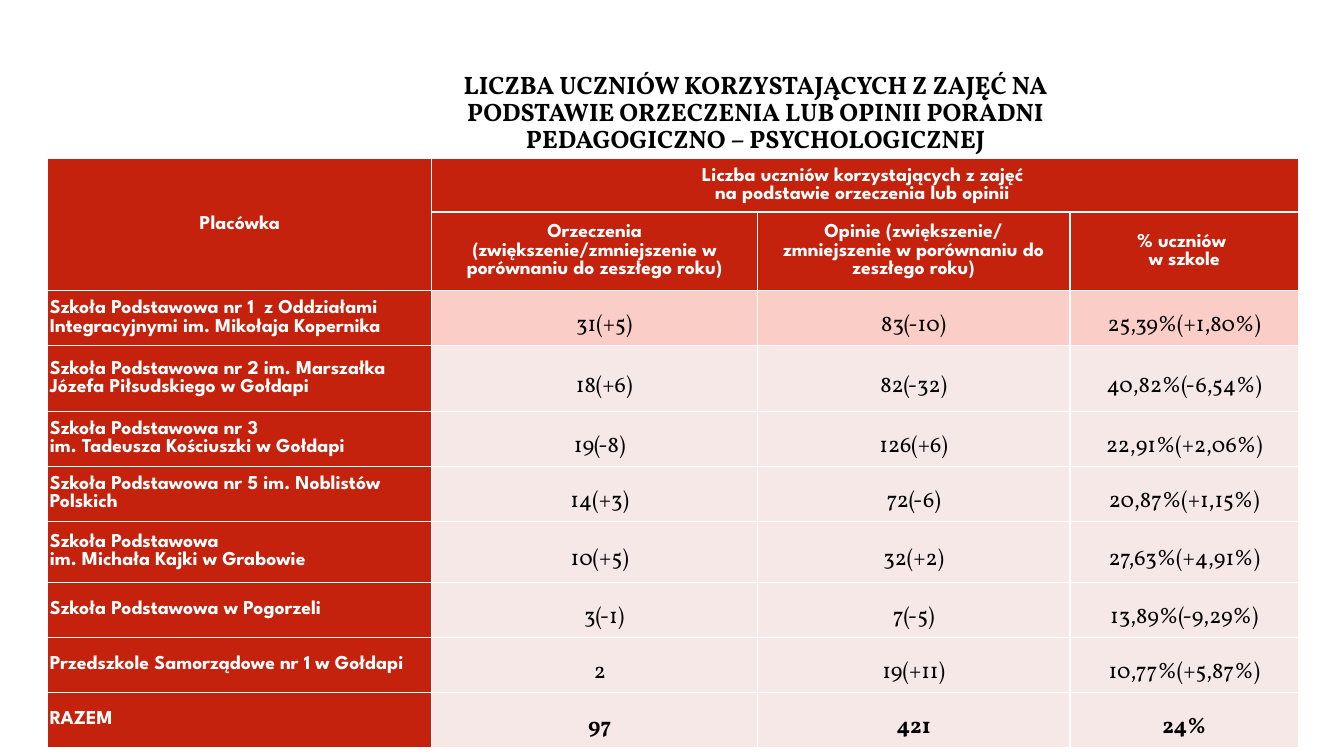
from dataclasses import dataclass
from typing import Any

from lxml.etree import SubElement
from pptx import Presentation
from pptx.dml.color import RGBColor
from pptx.enum.text import MSO_ANCHOR, PP_ALIGN
from pptx.oxml.ns import qn
from pptx.util import Pt


@dataclass(frozen=True)
class Theme:
    red: RGBColor = RGBColor(0xC4, 0x22, 0x0D)
    rose: RGBColor = RGBColor(0xFB, 0xCD, 0xC7)
    blush: RGBColor = RGBColor(0xF5, 0xE8, 0xE7)
    white: RGBColor = RGBColor(0xFF, 0xFF, 0xFF)
    black: RGBColor = RGBColor(0x00, 0x00, 0x00)
    label_font: str = "League Spartan"
    value_font: str = "Vollkorn"
    title_size: int = 18
    label_size: int = 14
    value_size: int = 16


@dataclass(frozen=True)
class TextStyle:
    font: dict[str, Any]
    color: RGBColor
    paragraph: dict[str, Any]
    indent: float = 0


@dataclass(frozen=True)
class CellStyle:
    text: TextStyle
    fill: RGBColor
    inset: float


@dataclass(frozen=True)
class HeaderCell:
    row: int
    column: int
    text: str
    paragraph: dict[str, Any]
    last_row: int
    last_column: int


@dataclass(frozen=True)
class School:
    name: str
    values: tuple[str, str, str]
    height: float
    indent: float = 7.2
    fill: RGBColor = Theme.blush
    line_spacing: float = 1.5
    before: float = 2.9
    after: float = 2.9
    bold: bool = False
    name_alignment: PP_ALIGN = PP_ALIGN.LEFT


THEME = Theme()
TITLE = "LICZBA UCZNIÓW KORZYSTAJĄCYCH Z ZAJĘĆ NA PODSTAWIE ORZECZENIA LUB OPINII PORADNI PEDAGOGICZNO – PSYCHOLOGICZNEJ"
COLUMN_WIDTHS = (274.3, 232.6, 223.2, 163.4)
HEADER_HEIGHTS = (38.2, 56.2)
LABEL_INSET = 1.44
VALUE_INSET = 2.88
LABEL_FONT = {"name": THEME.label_font, "size": Pt(THEME.label_size), "bold": True}
LABEL_SPACING = {"space_before": Pt(2.9), "space_after": Pt(2.9)}
CENTERED = {"alignment": PP_ALIGN.CENTER}
CENTERED_SPACED = CENTERED | LABEL_SPACING

HEADERS = (
    HeaderCell(0, 0, "Placówka", CENTERED_SPACED, 1, 0),
    HeaderCell(0, 1, "Liczba uczniów korzystających z zajęć \vna podstawie orzeczenia lub opinii ",
               CENTERED_SPACED, 0, 3),
    HeaderCell(1, 1, "Orzeczenia (zwiększenie/zmniejszenie w porównaniu do zeszłego roku)",
               CENTERED, 1, 1),
    HeaderCell(1, 2, "Opinie (zwiększenie/\nzmniejszenie w porównaniu do zeszłego roku)",
               CENTERED, 1, 2),
    HeaderCell(1, 3, "% uczniów \vw szkole", CENTERED, 1, 3),
)

SCHOOLS = (
    School("Szkoła Podstawowa nr 1  z Oddziałami Integracyjnymi im. Mikołaja Kopernika",
           ("31(+5)", "83(-10)", "25,39%(+1,80%)"), 38.2, indent=13.7, fill=THEME.rose),
    School("Szkoła Podstawowa nr 2 im. Marszałka Józefa Piłsudskiego w Gołdapi",
           ("18(+6)", "82(-32)", "40,82%(-6,54%)"), 46.8, indent=13.7,
           line_spacing=1.54, before=0, after=0.2),
    School("Szkoła Podstawowa nr 3 \vim. Tadeusza Kościuszki w Gołdapi",
           ("19(-8)", "126(+6)", "22,91%(+2,06%)"), 38.2),
    School("Szkoła Podstawowa nr 5 im. Noblistów Polskich",
           ("14(+3)", "72(-6)", "20,87%(+1,15%)"), 38.2),
    School("Szkoła Podstawowa \vim. Michała Kajki w Grabowie",
           ("10(+5)", "32(+2)", "27,63%(+4,91%)"), 43.9),
    School("Szkoła Podstawowa w Pogorzeli",
           ("3(-1)", "7(-5)", "13,89%(-9,29%)"), 38.2, indent=13.7),
    School("Przedszkole Samorządowe nr 1 w Gołdapi",
           ("2", "19(+11)", "10,77%(+5,87%)"), 35.3),
    School("RAZEM", ("97", "421", "24%"), 19.4, bold=True, name_alignment=PP_ALIGN.JUSTIFY),
)


def apply(target: Any, values: dict[str, Any]) -> None:
    for name, value in values.items():
        setattr(target, name, value)


def write_text(text_frame: Any, text: str, style: TextStyle) -> None:
    text_frame.text = text
    for paragraph in text_frame.paragraphs:
        apply(paragraph, style.paragraph)
        if style.indent:
            properties = paragraph._p.get_or_add_pPr()
            properties.set("marL", str(Pt(style.indent)))
            properties.set("indent", "0")
        for run in paragraph.runs:
            apply(run.font, style.font)
            run.font.color.rgb = style.color


def draw_borders(cell: Any) -> None:
    properties = cell._tc.get_or_add_tcPr()
    for side in ("a:lnL", "a:lnR", "a:lnT", "a:lnB"):
        line = SubElement(properties, qn(side), w=str(Pt(1)))
        SubElement(SubElement(line, qn("a:solidFill")), qn("a:srgbClr"), val=str(THEME.white))


def fill_cell(cell: Any, text: str, style: CellStyle) -> None:
    sides = ("margin_left", "margin_right", "margin_top", "margin_bottom")
    apply(cell, dict.fromkeys(sides, Pt(style.inset)))
    cell.vertical_anchor = MSO_ANCHOR.MIDDLE
    cell.fill.solid()
    cell.fill.fore_color.rgb = style.fill
    write_text(cell.text_frame, text, style.text)


def label_style(paragraph: dict[str, Any]) -> CellStyle:
    return CellStyle(TextStyle(LABEL_FONT, THEME.white, paragraph), THEME.red, LABEL_INSET)


def value_style(school: School, indent: float) -> CellStyle:
    font = {"name": THEME.value_font, "size": Pt(THEME.value_size), "bold": school.bold}
    paragraph = CENTERED | {"line_spacing": school.line_spacing,
                            "space_before": Pt(school.before), "space_after": Pt(school.after)}
    return CellStyle(TextStyle(font, THEME.black, paragraph, indent), school.fill, VALUE_INSET)


def draw_title(slide: Any) -> None:
    title = slide.shapes.title
    apply(title, {"left": Pt(284.4), "top": Pt(40.3), "width": Pt(510.5), "height": Pt(81.4)})
    apply(title.text_frame, {"vertical_anchor": MSO_ANCHOR.MIDDLE, "word_wrap": True})
    font = {"name": THEME.value_font, "size": Pt(THEME.title_size), "bold": True}
    write_text(title.text_frame, TITLE,
               TextStyle(font, THEME.black, CENTERED | {"line_spacing": 0.9}))


def draw_table(slide: Any) -> None:
    heights = HEADER_HEIGHTS + tuple(school.height for school in SCHOOLS)
    table = slide.shapes.add_table(len(heights), len(COLUMN_WIDTHS), Pt(34.2), Pt(113.3),
                                   Pt(sum(COLUMN_WIDTHS)), Pt(sum(heights))).table
    apply(table, {"first_row": False, "horz_banding": False})
    for column, width in zip(table.columns, COLUMN_WIDTHS):
        column.width = Pt(width)
    for row, height in zip(table.rows, heights):
        row.height = Pt(height)
    for cell in table.iter_cells():
        draw_borders(cell)
    for header in HEADERS:
        cell = table.cell(header.row, header.column)
        last = table.cell(header.last_row, header.last_column)
        if (header.row, header.column) != (header.last_row, header.last_column):
            cell.merge(last)
        fill_cell(cell, header.text, label_style(header.paragraph))
    for row, school in enumerate(SCHOOLS, len(HEADER_HEIGHTS)):
        name_paragraph = LABEL_SPACING | {"alignment": school.name_alignment}
        fill_cell(table.cell(row, 0), school.name, label_style(name_paragraph))
        for column, value in enumerate(school.values, 1):
            indent = school.indent if column == 1 else 0
            fill_cell(table.cell(row, column), value, value_style(school, indent))


def main() -> None:
    presentation = Presentation()
    apply(presentation, {"slide_width": Pt(960), "slide_height": Pt(540)})
    slide = presentation.slides.add_slide(presentation.slide_layouts[5])
    draw_title(slide)
    draw_table(slide)
    presentation.save("out.pptx")


if __name__ == "__main__":
    main()
